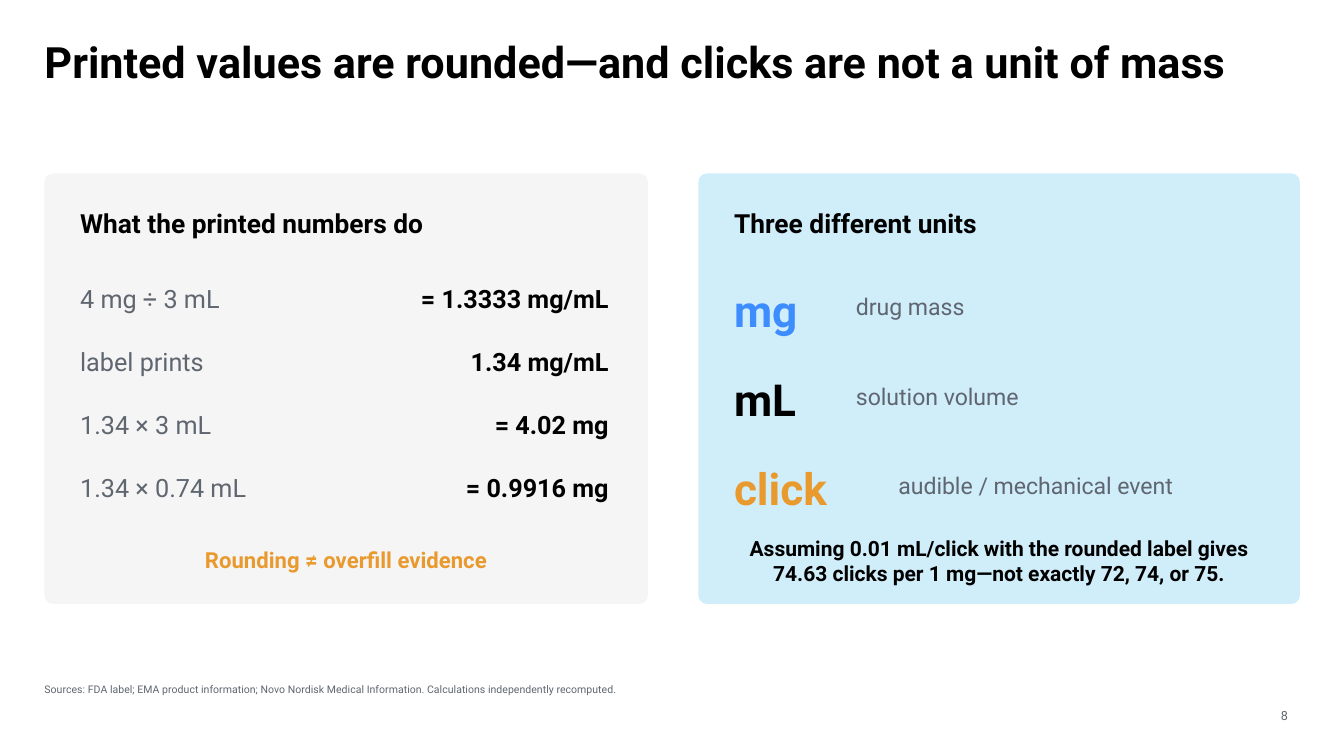
from dataclasses import dataclass

from pptx import Presentation
from pptx.dml.color import RGBColor
from pptx.enum.shapes import MSO_SHAPE
from pptx.enum.text import MSO_ANCHOR, MSO_AUTO_SIZE, PP_ALIGN
from pptx.shapes.base import BaseShape
from pptx.slide import Slide
from pptx.util import Cm, Pt

LEFT, CENTER, RIGHT = PP_ALIGN.LEFT, PP_ALIGN.CENTER, PP_ALIGN.RIGHT
TOP, BOTTOM = MSO_ANCHOR.TOP, MSO_ANCHOR.BOTTOM
NO_AUTOFIT = MSO_AUTO_SIZE.NONE
ROUNDED = MSO_SHAPE.ROUNDED_RECTANGLE
TITLE_ONLY = 5


@dataclass(frozen=True)
class Theme:
    font: str = "Roboto"
    black: str = "000000"
    grey: str = "5F6670"
    orange: str = "E99A2F"
    blue: str = "3D8DFF"
    pale_grey: str = "F5F5F5"
    pale_blue: str = "D0EDFA"
    title: float = 30.8
    heading: float = 18.8
    row: float = 18
    unit: float = 31.5
    meaning: float = 16.5
    takeaway: float = 15.8
    assumption: float = 15
    source: float = 7.5
    page: float = 9


THEME = Theme()


@dataclass(frozen=True)
class Box:
    left: float
    top: float
    width: float
    height: float


@dataclass(frozen=True)
class Style:
    size: float
    color: str = THEME.black
    bold: bool = False
    align: PP_ALIGN = LEFT
    anchor: MSO_ANCHOR = TOP


@dataclass(frozen=True)
class Panel:
    left: float
    width: float
    fill: str
    heading: str

    @property
    def inner_left(self) -> float:
        return self.left + PADDING

    @property
    def inner_width(self) -> float:
        return self.width - 2 * PADDING


@dataclass(frozen=True)
class Calculation:
    expression: str
    result: str


@dataclass(frozen=True)
class Unit:
    name: str
    meaning: str
    color: str
    name_width: float
    meaning_width: float


MARGIN = 1.12
PADDING = 0.9
PANEL_TOP, PANEL_HEIGHT = 4.37, 10.85
HEADING_TOP = 5.23
ROWS_TOP = 7.14
CALCULATION_PITCH = 1.59
UNIT_PITCH = 2.25
UNIT_GAP = 0.43

NUMBERS = Panel(MARGIN, 15.21, THEME.pale_grey, "What the printed numbers do")
UNITS = Panel(17.6, 15.16, THEME.pale_blue, "Three different units")

CALCULATIONS = (
    Calculation("4 mg ÷ 3 mL", "= 1.3333 mg/mL"),
    Calculation("label prints", "1.34 mg/mL"),
    Calculation("1.34 × 3 mL", "= 4.02 mg"),
    Calculation("1.34 × 0.74 mL", "= 0.9916 mg"),
)
UNIT_ROWS = (
    Unit("mg", "drug mass", THEME.blue, 2.64, 9),
    Unit("mL", "solution volume", THEME.black, 2.64, 9),
    Unit("click", "audible / mechanical event", THEME.orange, 3.71, 8.74),
)


def place(shape: BaseShape, box: Box) -> None:
    shape.left, shape.top = Cm(box.left), Cm(box.top)
    shape.width, shape.height = Cm(box.width), Cm(box.height)


def write(shape: BaseShape, text: str, style: Style) -> None:
    frame = shape.text_frame
    frame.text = text
    frame.word_wrap = True
    frame.auto_size = NO_AUTOFIT
    frame.vertical_anchor = style.anchor
    frame.margin_left = frame.margin_right = 0
    frame.margin_top = frame.margin_bottom = 0
    paragraph = frame.paragraphs[0]
    paragraph.alignment = style.align
    font = paragraph.runs[0].font
    font.name = THEME.font
    font.size = Pt(style.size)
    font.bold = style.bold
    font.color.rgb = RGBColor.from_string(style.color)


def add_text(slide: Slide, box: Box, text: str, style: Style) -> None:
    shape = slide.shapes.add_textbox(0, 0, 0, 0)
    place(shape, box)
    write(shape, text, style)


def add_panel(slide: Slide, panel: Panel) -> None:
    shape = slide.shapes.add_shape(ROUNDED, 0, 0, 0, 0)
    place(shape, Box(panel.left, PANEL_TOP, panel.width, PANEL_HEIGHT))
    shape.adjustments[0] = 0.02
    shape.shadow.inherit = False
    shape.fill.solid()
    shape.fill.fore_color.rgb = RGBColor.from_string(panel.fill)
    shape.line.fill.background()
    add_text(slide, Box(panel.inner_left, HEADING_TOP, panel.inner_width, 1.02),
             panel.heading, Style(THEME.heading, bold=True))


def add_calculations(slide: Slide) -> None:
    for index, calculation in enumerate(CALCULATIONS):
        top = ROWS_TOP + index * CALCULATION_PITCH
        add_text(slide, Box(NUMBERS.inner_left, top, 7.14, 1.07),
                 calculation.expression, Style(THEME.row, THEME.grey))
        add_text(slide, Box(8.74, top, 6.6, 1.07),
                 calculation.result, Style(THEME.row, bold=True, align=RIGHT))
    add_text(slide, Box(NUMBERS.inner_left, 13.77, NUMBERS.inner_width, 0.9),
             "Rounding ≠ overfill evidence",
             Style(THEME.takeaway, THEME.orange, True, CENTER))


def add_units(slide: Slide) -> None:
    for index, unit in enumerate(UNIT_ROWS):
        top = ROWS_TOP + index * UNIT_PITCH
        add_text(slide, Box(UNITS.inner_left, top, unit.name_width, 1.45),
                 unit.name, Style(THEME.unit, unit.color, True))
        meaning_left = UNITS.inner_left + unit.name_width + UNIT_GAP
        add_text(slide, Box(meaning_left, top + 0.24, unit.meaning_width, 0.97),
                 unit.meaning, Style(THEME.meaning, THEME.grey))
    add_text(slide, Box(UNITS.inner_left, 13.49, UNITS.inner_width, 1.52),
             "Assuming 0.01 mL/click with the rounded label gives "
             "74.63 clicks per 1 mg—not exactly 72, 74, or 75.",
             Style(THEME.assumption, bold=True, align=CENTER))


def main() -> None:
    presentation = Presentation()
    presentation.slide_width, presentation.slide_height = Cm(33.87), Cm(19.05)
    slide = presentation.slides.add_slide(presentation.slide_layouts[TITLE_ONLY])
    title = slide.shapes.title
    place(title, Box(MARGIN, 0.89, 31.65, 2.44))
    write(title, "Printed values are rounded—and clicks are not a unit of mass",
          Style(THEME.title, bold=True))
    add_panel(slide, NUMBERS)
    add_calculations(slide)
    add_panel(slide, UNITS)
    add_units(slide)
    add_text(slide, Box(MARGIN, 17.2, 29.64, 0.84),
             "Sources: FDA label; EMA product information; Novo Nordisk Medical "
             "Information. Calculations independently recomputed.",
             Style(THEME.source, THEME.grey))
    add_text(slide, Box(31.34, 17.73, 1.12, 0.48), "8",
             Style(THEME.page, THEME.grey, align=RIGHT, anchor=BOTTOM))
    presentation.save("out.pptx")


if __name__ == "__main__":
    main()
